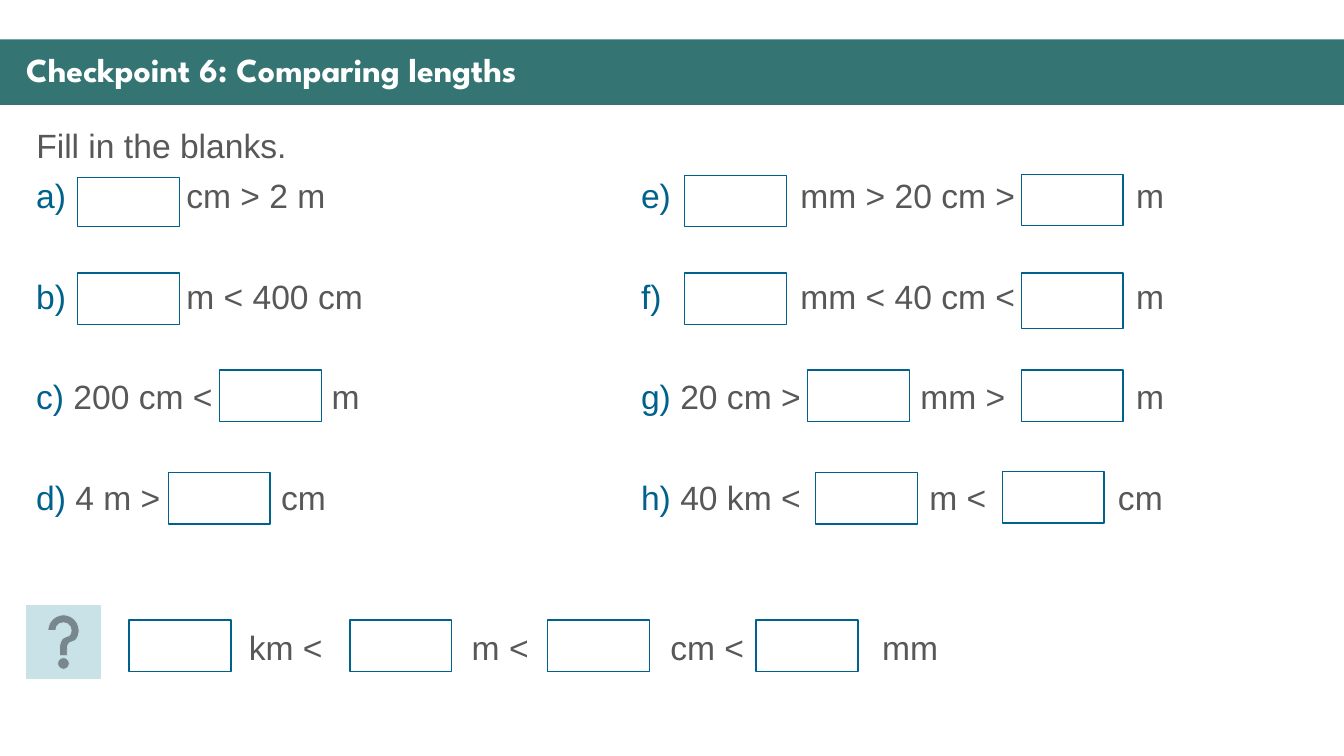
from lxml import etree
from pptx import Presentation
from pptx.dml.color import RGBColor
from pptx.enum.shapes import MSO_SHAPE as Preset
from pptx.enum.text import MSO_ANCHOR as Anchor, MSO_AUTO_SIZE as AutoSize, PP_ALIGN as Align
from pptx.oxml.ns import qn
from pptx.util import Inches, Pt

TEAL, BLUE, GREY, PALE, WHITE = "347574", "00628C", "585858", "C8E2E8", "FFFFFF"
LINE_HEIGHT = 25.9

# Space before in points, tab stops in inches, then (text, colour) runs.
# Each tab jumps over an answer box or to the right-hand column.
QUESTIONS = [
    (0, [1.49, 6, 7.58, 10.91],
     [("a)\t", BLUE), ("cm > 2 m\t", GREY), ("e)\t", BLUE), ("mm > 20 cm >\tm", GREY)]),
    (45.8, [1.49, 6, 7.58, 10.91],
     [("b)\t", BLUE), ("m < 400 cm\t", GREY), ("f)\t", BLUE), ("mm < 40 cm <\tm", GREY)]),
    (45.8, [2.93, 6, 8.77, 10.91],
     [("c) ", BLUE), ("200 cm <\tm\t", GREY), ("g) ", BLUE), ("20 cm >\tmm >\tm", GREY)]),
    (45.8, [2.43, 6, 8.86, 10.73],
     [("d) ", BLUE), ("4 m >\tcm\t", GREY), ("h) ", BLUE), ("40 km <\tm <\tcm", GREY)]),
    (81.8, [2.11, 4.32, 6.29, 8.39], [("\tkm <\tm <\tcm <\tmm", GREY)]),
]

# Left, top and height of each answer box
ANSWER_BOXES = [
    (0.77, 1.76, 0.49), (6.79, 1.74, 0.51), (10.13, 1.73, 0.51),
    (0.77, 2.71, 0.51), (6.79, 2.71, 0.51), (10.13, 2.71, 0.55),
    (2.18, 3.67, 0.51), (8.01, 3.67, 0.51), (10.13, 3.67, 0.51),
    (1.67, 4.69, 0.51), (8.09, 4.69, 0.51), (9.94, 4.68, 0.51),
    (1.28, 6.15, 0.51), (3.47, 6.15, 0.51), (5.43, 6.15, 0.51), (7.5, 6.15, 0.51),
]


def colour(value):
    return RGBColor.from_string(value)


def place(shape, left, top, width, height):
    shape.left, shape.top = Inches(left), Inches(top)
    shape.width, shape.height = Inches(width), Inches(height)


def add_preset(slide, preset, left, top, width, height, fill=None, line=None, line_width=1):
    shape = slide.shapes.add_shape(
        preset, Inches(left), Inches(top), Inches(width), Inches(height))
    shape.shadow.inherit = False
    if fill:
        shape.fill.solid()
        shape.fill.fore_color.rgb = colour(fill)
    else:
        shape.fill.background()
    if line:
        shape.line.color.rgb = colour(line)
        shape.line.width = Pt(line_width)
    else:
        shape.line.fill.background()
    return shape


def prepare_text(shape, anchor):
    frame = shape.text_frame
    frame.word_wrap = True
    frame.auto_size = AutoSize.NONE
    frame.vertical_anchor = anchor
    return frame


def add_run(paragraph, text, font, text_colour, bold=False):
    run = paragraph.add_run()
    run.text = text
    run.font.name = font
    run.font.size = Pt(24)
    run.font.bold = bold
    run.font.color.rgb = colour(text_colour)


def remove_bullet(paragraph):
    properties = paragraph._p.get_or_add_pPr()
    properties.set("marL", "0")
    properties.set("indent", "0")
    etree.SubElement(properties, qn("a:buNone"))


def set_tabs(paragraph, stops):
    """Set left tab stops, given in inches."""
    tab_list = etree.SubElement(paragraph._p.get_or_add_pPr(), qn("a:tabLst"))
    for stop in stops:
        etree.SubElement(tab_list, qn("a:tab"), pos=str(Inches(stop)), algn="l")


def add_heading(slide):
    bar = add_preset(slide, Preset.RECTANGLE, 0, 0.39, 13.33, 0.65, fill=TEAL)
    slide.shapes._spTree.insert(2, bar._element)
    title = slide.shapes.title
    place(title, 0.16, 0.48, 13.04, 0.47)
    paragraph = prepare_text(title, Anchor.MIDDLE).paragraphs[0]
    paragraph.alignment = Align.LEFT
    paragraph.line_spacing = 0.9
    add_run(paragraph, "Checkpoint 6: Comparing lengths", "League Spartan", WHITE, bold=True)


def add_instruction(slide):
    body = slide.placeholders[1]
    place(body, 0.26, 1.23, 12.81, 0.5)
    paragraph = prepare_text(body, Anchor.TOP).paragraphs[0]
    paragraph.line_spacing = Pt(LINE_HEIGHT)
    paragraph.space_before = Pt(0)
    remove_bullet(paragraph)
    add_run(paragraph, "Fill in the blanks.", "Arial", GREY)


def add_questions(slide):
    box = slide.shapes.add_textbox(Inches(0.26), Inches(1.73), Inches(12.81), Inches(5.4))
    frame = prepare_text(box, Anchor.TOP)
    for index, (space_before, stops, runs) in enumerate(QUESTIONS):
        paragraph = frame.add_paragraph() if index else frame.paragraphs[0]
        paragraph.line_spacing = Pt(LINE_HEIGHT)
        paragraph.space_before = Pt(space_before)
        set_tabs(paragraph, stops)
        for text, text_colour in runs:
            add_run(paragraph, text, "Arial", text_colour)


def main():
    presentation = Presentation()
    presentation.slide_width, presentation.slide_height = Inches(13.33), Inches(7.5)
    slide = presentation.slides.add_slide(presentation.slide_layouts[1])
    add_heading(slide)
    add_instruction(slide)
    add_questions(slide)
    for left, top, height in ANSWER_BOXES:
        add_preset(slide, Preset.RECTANGLE, left, top, 1.01, height, line=BLUE)
    add_preset(slide, Preset.ACTION_BUTTON_HELP, 0.26, 6.01, 0.74, 0.72,
               fill=PALE, line=PALE, line_width=0.5)
    presentation.save("out.pptx")


if __name__ == "__main__":
    main()
